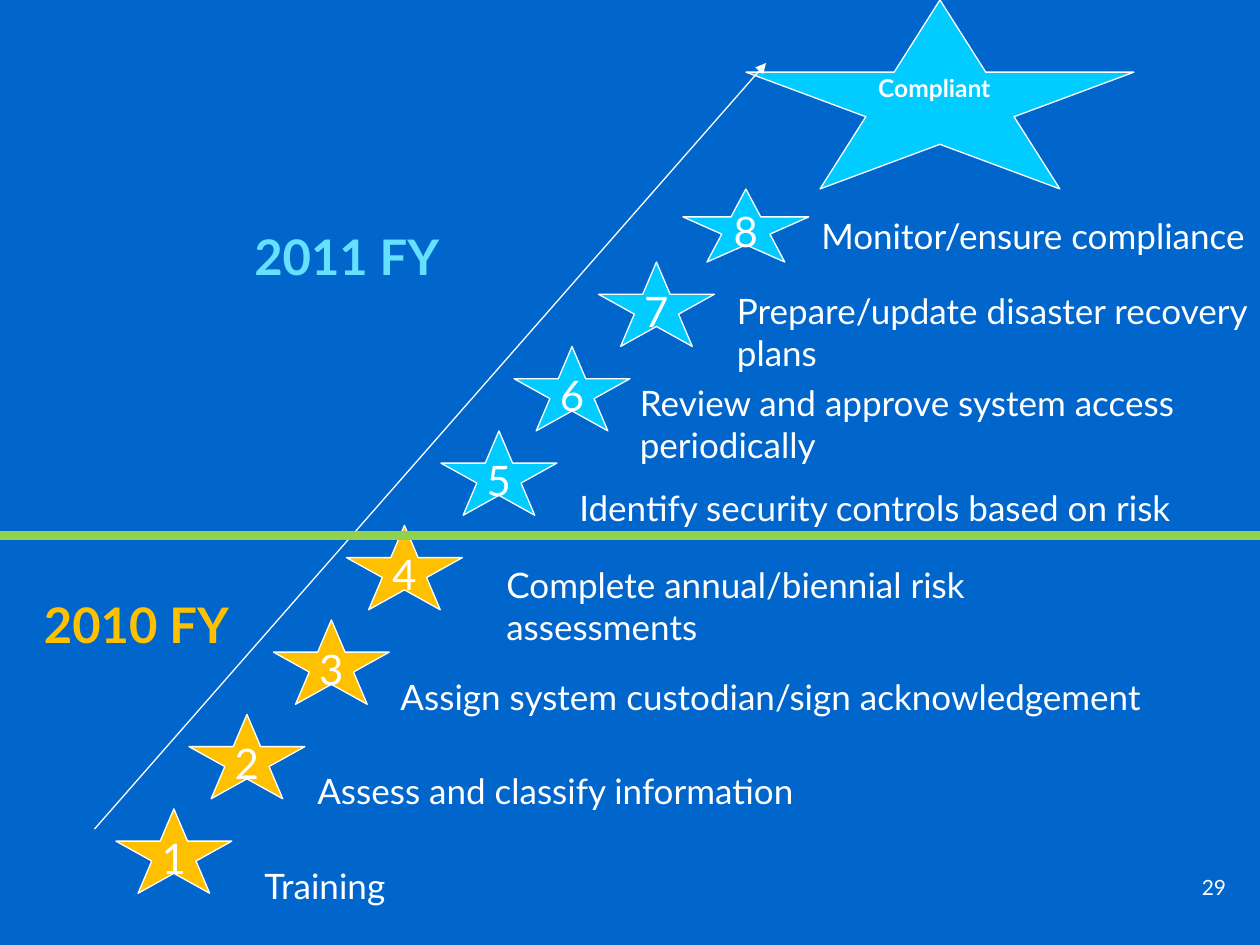
import pptx
import pptx.util
import pptx.dml.color
import pptx.enum.shapes
import pptx.enum.text
import pptx.oxml.ns
import pptx.oxml.xmlchemy
from pptx.util import Inches

COLORS = {
    "background": "0066CC",
    "white": "FFFFFF",
    "fy2010": "FFC000",
    "fy2011": "00CCFF",
    "fy2011_label": "66E0FF",
    "divider": "92D050",
}
ALIGN = pptx.enum.text.PP_ALIGN
ANCHOR = pptx.enum.text.MSO_ANCHOR


def rgb(name):
    return pptx.dml.color.RGBColor.from_string(COLORS[name])


def write(shape, text, size, color="white", bold=False, align=ALIGN.LEFT,
          anchor=ANCHOR.TOP, wrap=False):
    frame = shape.text_frame
    frame.text = text
    frame.word_wrap = wrap
    frame.vertical_anchor = anchor
    for paragraph in frame.paragraphs:
        paragraph.alignment = align
        for run in paragraph.runs:
            run.font.name = "Lato"
            run.font.size = pptx.util.Pt(size)
            run.font.bold = bold
            run.font.color.rgb = rgb(color)


presentation = pptx.Presentation()
presentation.slide_width = Inches(10)
presentation.slide_height = Inches(7.5)
slide = presentation.slides.add_slide(presentation.slide_layouts[6])
slide.background.fill.solid()
slide.background.fill.fore_color.rgb = rgb("background")

stars = [
    ("Compliant", 5.92, 0, 3.08, 1.5, "fy2011"),
    ("1", 0.92, 6.42, 0.92, 0.67, "fy2010"),
    ("2", 1.5, 5.67, 0.92, 0.67, "fy2010"),
    ("3", 2.17, 4.92, 0.92, 0.67, "fy2010"),
    ("4", 2.75, 4.17, 0.92, 0.67, "fy2010"),
    ("5", 3.5, 3.42, 0.92, 0.67, "fy2011"),
    ("6", 4.08, 2.75, 0.92, 0.67, "fy2011"),
    ("7", 4.75, 2.08, 0.92, 0.67, "fy2011"),
    ("8", 5.42, 1.5, 1, 0.58, "fy2011"),
]
for label, left, top, width, height, color in stars:
    star = slide.shapes.add_shape(
        pptx.enum.shapes.MSO_SHAPE.STAR_5_POINT,
        Inches(left), Inches(top), Inches(width), Inches(height))
    star.shadow.inherit = False
    star.fill.solid()
    star.fill.fore_color.rgb = rgb(color)
    star.line.color.rgb = rgb("white")
    star.line.width = pptx.util.Pt(0.75)
    if label == "Compliant":
        write(star, label, 14, bold=True, wrap=True)
        star.text_frame.paragraphs[0].line_spacing = 0.8
    else:
        write(star, label, 24, align=ALIGN.CENTER, anchor=ANCHOR.MIDDLE)

steps = [
    ("Training", 2, 6.81, 1.2, 0.44),
    ("Assess and classify information", 2.42, 6.06, 4.07, 0.44),
    ("Assign system custodian/sign acknowledgement", 3.08, 5.31, 6.19, 0.44),
    ("Complete annual/biennial risk assessments", 3.92, 4.42, 4.52, 0.77),
    ("Identify security controls based on risk", 4.5, 3.81, 5.07, 0.44),
    ("Review and approve system access\nperiodically", 4.98, 2.98, 4.64, 0.77),
    ("Prepare/update disaster recovery\nplans", 5.75, 2.25, 4.52, 0.77),
    ("Monitor/ensure compliance", 6.42, 1.65, 3.65, 0.44),
]
for text, left, top, width, height in steps:
    step = slide.shapes.add_textbox(Inches(left), Inches(top), Inches(width), Inches(height))
    write(step, text, 20, wrap=text.startswith("Complete"))

connectors = [
    (0.75, 6.58, 6.08, 0.5, "white", 0.75, True),
    (10, 4.25, 0, 4.25, "divider", 5.5, False),
]
for x1, y1, x2, y2, color, weight, arrow in connectors:
    connector = slide.shapes.add_connector(
        pptx.enum.shapes.MSO_CONNECTOR.STRAIGHT,
        Inches(x1), Inches(y1), Inches(x2), Inches(y2))
    connector.line.color.rgb = rgb(color)
    connector.line.width = pptx.util.Pt(weight)
    properties = connector.element.spPr
    if arrow:
        tail = pptx.oxml.xmlchemy.OxmlElement("a:tailEnd")
        tail.set("type", "triangle")
        properties.find(pptx.oxml.ns.qn("a:ln")).append(tail)
    properties.append(pptx.oxml.xmlchemy.OxmlElement("a:effectLst"))

years = [
    ("2010 FY", 0.25, 4.67, "fy2010"),
    ("2011 FY", 1.92, 1.75, "fy2011_label"),
]
for text, left, top, color in years:
    year = slide.shapes.add_textbox(Inches(left), Inches(top), Inches(1.71), Inches(0.57))
    write(year, text, 28, color, bold=True)

page_number = slide.shapes.add_textbox(Inches(7.75), Inches(6.83), Inches(2.08), Inches(0.42))
write(page_number, "29", 12, align=ALIGN.RIGHT, anchor=ANCHOR.MIDDLE)

presentation.save("out.pptx")
